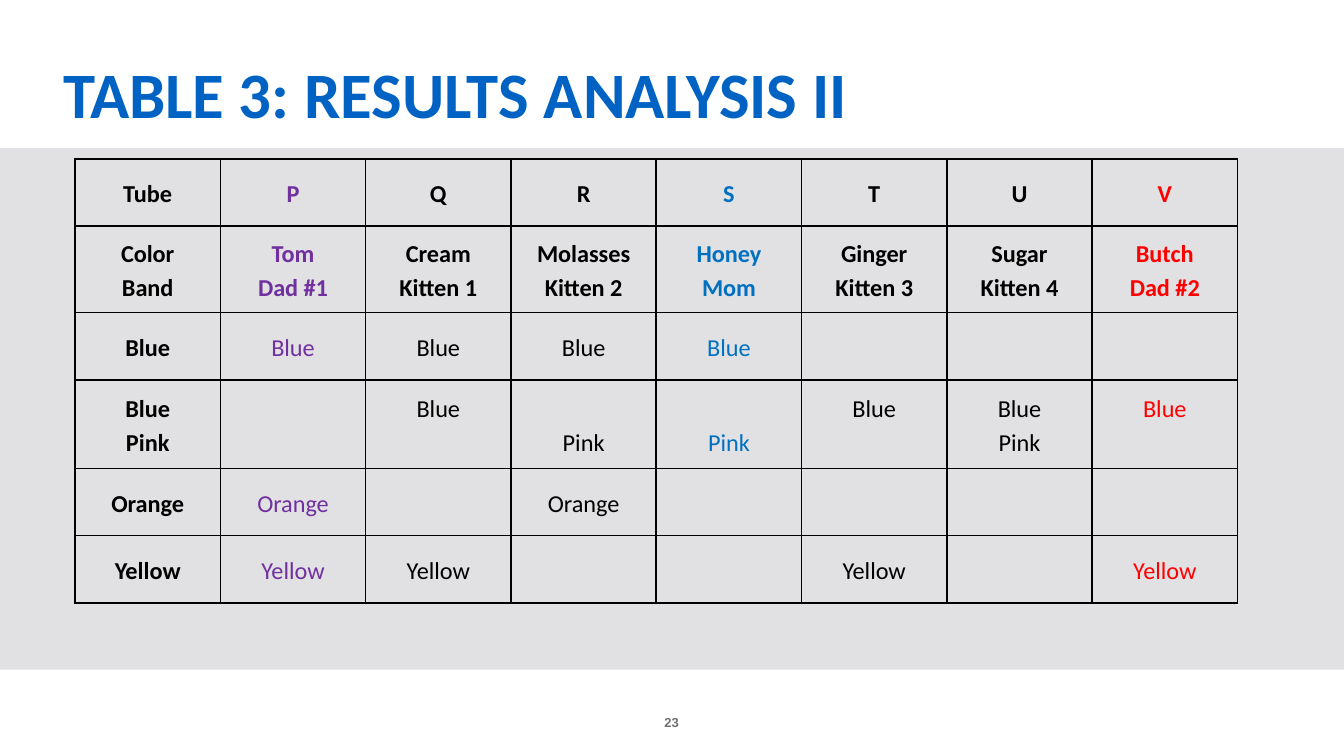
from lxml import etree
from pptx import Presentation
from pptx.dml.color import RGBColor
from pptx.enum.shapes import MSO_SHAPE
from pptx.enum.text import MSO_ANCHOR, MSO_AUTO_SIZE, PP_ALIGN
from pptx.oxml.ns import qn
from pptx.util import Pt

RECTANGLE = MSO_SHAPE.RECTANGLE
TOP, MIDDLE, BOTTOM = MSO_ANCHOR.TOP, MSO_ANCHOR.MIDDLE, MSO_ANCHOR.BOTTOM
LEFT, CENTER = PP_ALIGN.LEFT, PP_ALIGN.CENTER
NO_AUTOFIT = MSO_AUTO_SIZE.NONE

BLACK = "000000"
TUBE_COLORS = {1: "7030A0", 4: "0070C0", 7: "FF0000"}
COLUMN_WIDTH = 77.86
ROW_HEIGHTS = [36, 42.5, 36, 47.5, 36, 36]
HEADER_ROWS = 2
PAIRED_ROW = 3
CELL_INSET = 5
PAIRED_INSET = 5.6
RESULTS = [
    ["Tube", "P", "Q", "R", "S", "T", "U", "V"],
    ["Color\nBand", "Tom\nDad #1", "Cream\nKitten 1", "Molasses\nKitten 2",
     "Honey\nMom", "Ginger\nKitten 3", "Sugar\nKitten 4", "Butch\nDad #2"],
    ["Blue", "Blue", "Blue", "Blue", "Blue", "", "", ""],
    ["Blue\nPink", "", "Blue", "Pink", "Pink", "Blue", "Blue\nPink", "Blue"],
    ["Orange", "Orange", "", "Orange", "", "", "", ""],
    ["Yellow", "Yellow", "Yellow", "", "", "Yellow", "", "Yellow"],
]


def rgb(color):
    """Turn a hex string into a colour."""
    return RGBColor.from_string(color)


def add_run(paragraph, text, size, color, font="Calibri", bold=True):
    """Add one formatted run to a paragraph."""
    run = paragraph.add_run()
    run.text = text
    run.font.name = font
    run.font.size = Pt(size)
    run.font.bold = bold
    run.font.color.rgb = rgb(color)


def set_margins(holder, horizontal, vertical):
    """Set the text margins of a frame or a cell."""
    holder.margin_left = holder.margin_right = Pt(horizontal)
    holder.margin_top = holder.margin_bottom = Pt(vertical)


def place_title(slide, text):
    """Move the title placeholder and fill it."""
    title = slide.shapes.title
    title.left, title.top = Pt(28.8), Pt(26)
    title.width, title.height = Pt(662.4), Pt(47.5)
    frame = title.text_frame
    frame.auto_size = NO_AUTOFIT
    frame.word_wrap = True
    frame.vertical_anchor = BOTTOM
    set_margins(frame, 5, 2.9)
    frame.paragraphs[0].alignment = LEFT
    add_run(frame.paragraphs[0], text, 34.7, "0063C3")


def add_band(slide):
    """Add the grey band behind the table."""
    band = slide.shapes.add_shape(RECTANGLE, Pt(0), Pt(79.4), Pt(720), Pt(279.4))
    band.shadow.inherit = False
    band.fill.solid()
    band.fill.fore_color.rgb = rgb("E1E1E3")
    band.line.fill.background()


def add_page_number(slide, number):
    """Add the page number at the foot of the slide."""
    footer = slide.shapes.add_textbox(Pt(327), Pt(369.4), Pt(65.5), Pt(21.6))
    frame = footer.text_frame
    frame.word_wrap = True
    frame.vertical_anchor = BOTTOM
    set_margins(frame, 0, 0)
    frame.paragraphs[0].alignment = CENTER
    add_run(frame.paragraphs[0], number, 7, "716F73", "Arial")


def add_borders(cell):
    """Draw a thin black line on each side of a cell."""
    properties = cell._tc.get_or_add_tcPr()
    for side in ("lnL", "lnR", "lnT", "lnB"):
        border = etree.SubElement(properties, qn(f"a:{side}"), w=str(Pt(1)))
        fill = etree.SubElement(border, qn("a:solidFill"))
        etree.SubElement(fill, qn("a:srgbClr"), val=BLACK)


def fill_cell(cell, text, color, bold, anchor, inset):
    """Format a cell and write its lines."""
    add_borders(cell)
    cell.fill.background()
    cell.vertical_anchor = anchor
    set_margins(cell, CELL_INSET, inset)
    frame = cell.text_frame
    for index, line in enumerate(text.split("\n") if text else []):
        paragraph = frame.add_paragraph() if index else frame.paragraphs[0]
        paragraph.alignment = CENTER
        paragraph.line_spacing = 1.15
        add_run(paragraph, line, 13, color, bold=bold)


def add_results_table(slide):
    """Add the table of color bands by tube."""
    column_count = len(RESULTS[0])
    table = slide.shapes.add_table(
        len(RESULTS), column_count, Pt(40.2), Pt(85.1),
        Pt(COLUMN_WIDTH * column_count), Pt(sum(ROW_HEIGHTS))).table
    table.first_row = table.horz_banding = False
    for column in table.columns:
        column.width = Pt(COLUMN_WIDTH)
    for row, height in zip(table.rows, ROW_HEIGHTS):
        row.height = Pt(height)
    paired_anchors = {"Blue": TOP, "Pink": BOTTOM}
    for row, values in enumerate(RESULTS):
        for column, text in enumerate(values):
            anchor, inset = MIDDLE, CELL_INSET
            if row == PAIRED_ROW and text in paired_anchors:
                anchor, inset = paired_anchors[text], PAIRED_INSET
            bold = row < HEADER_ROWS or column == 0
            color = TUBE_COLORS.get(column, BLACK)
            fill_cell(table.cell(row, column), text, color, bold, anchor, inset)


def main():
    """Build the slide and save it."""
    presentation = Presentation()
    presentation.slide_width, presentation.slide_height = Pt(720), Pt(405)
    slide = presentation.slides.add_slide(presentation.slide_layouts[5])
    place_title(slide, "TABLE 3: RESULTS ANALYSIS II")
    add_band(slide)
    add_results_table(slide)
    add_page_number(slide, "23")
    presentation.save("out.pptx")


if __name__ == "__main__":
    main()
